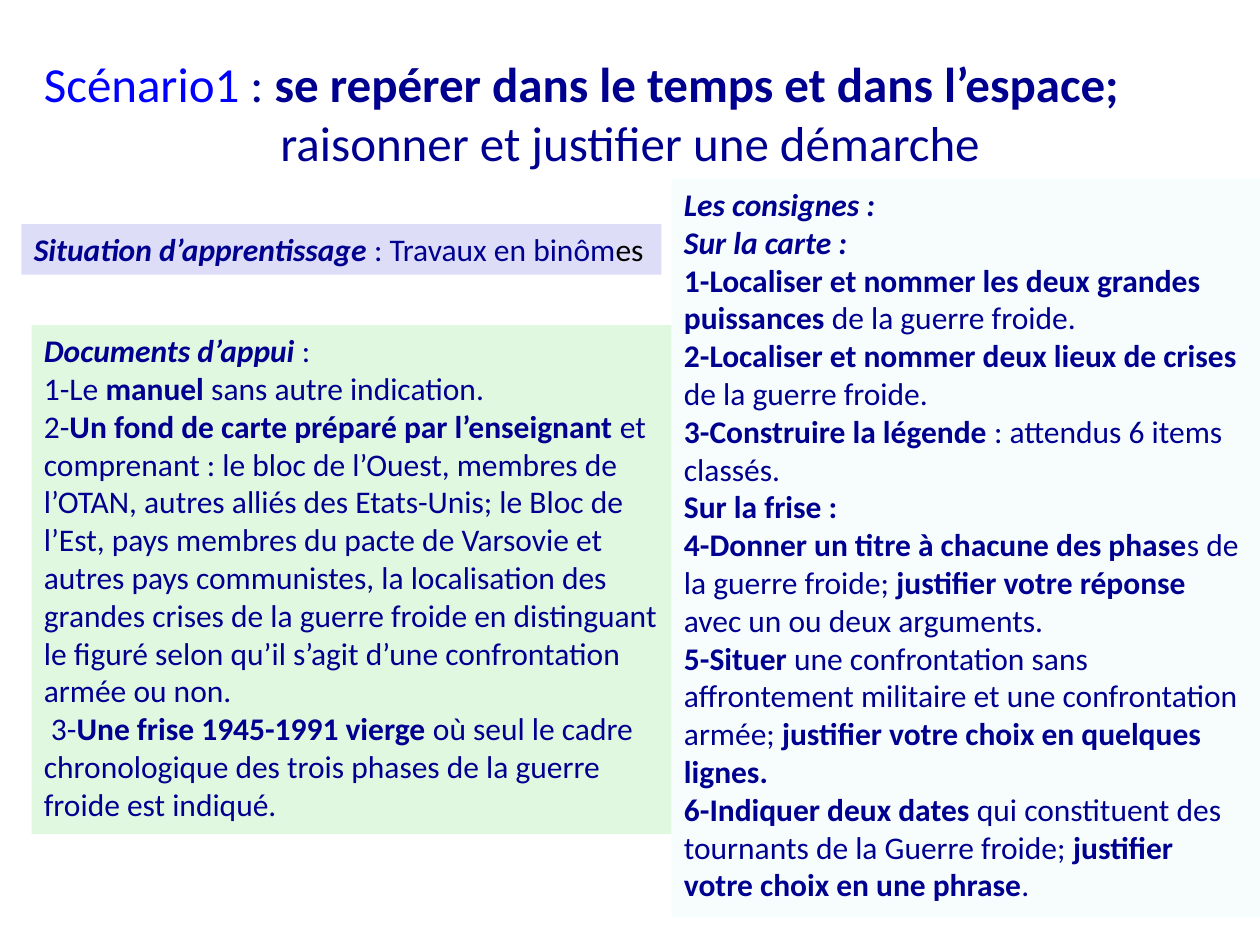
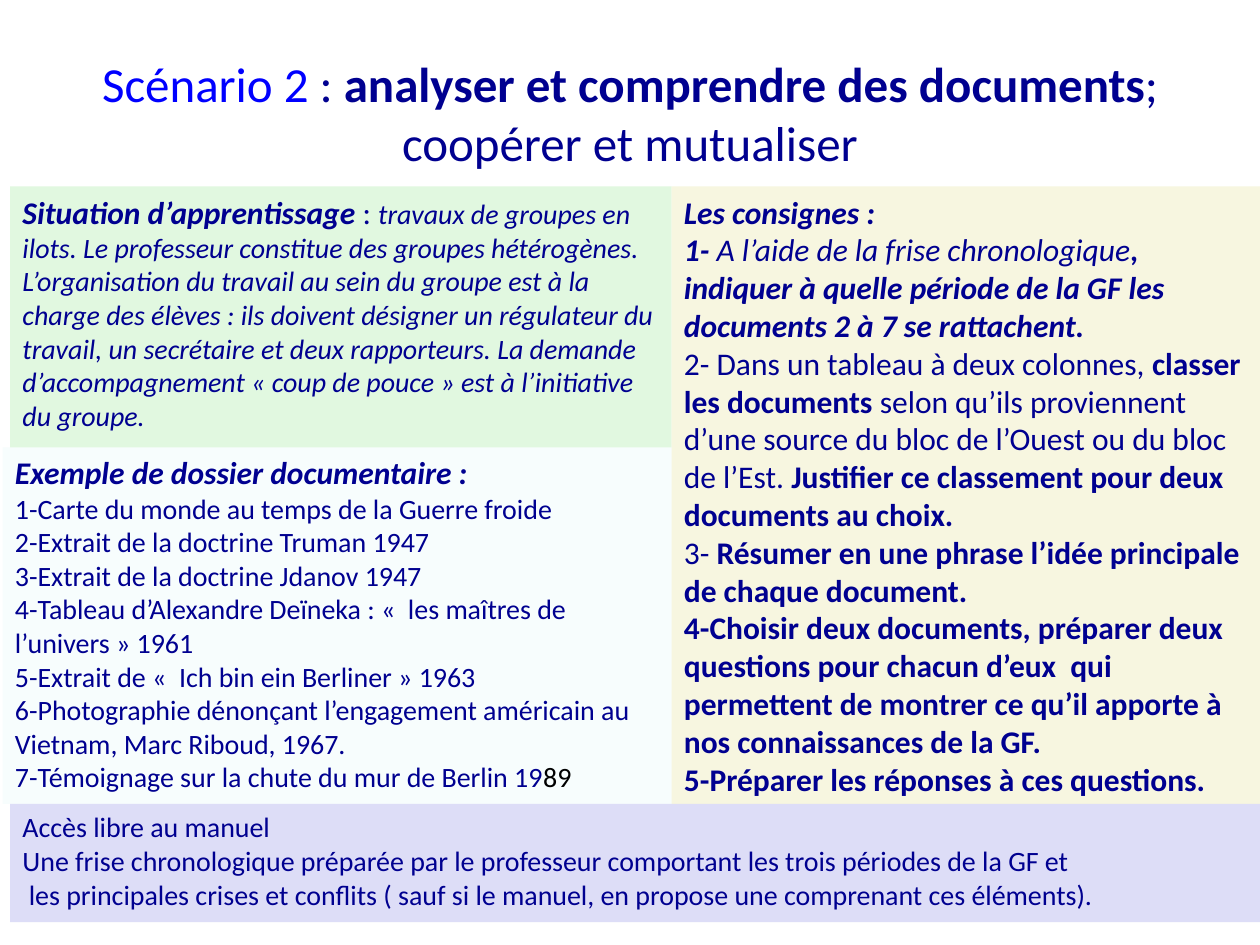
"""Build two lesson scenario slides about the Cold War."""
from pptx import Presentation
from pptx.dml.color import RGBColor
from pptx.enum.shapes import MSO_SHAPE
from pptx.enum.text import MSO_ANCHOR, PP_ALIGN
from pptx.util import Inches, Pt

RECTANGLE = MSO_SHAPE.RECTANGLE
TOP, MIDDLE = MSO_ANCHOR.TOP, MSO_ANCHOR.MIDDLE
LEFT, CENTER = PP_ALIGN.LEFT, PP_ALIGN.CENTER

NAVY, BLUE, BLACK = "000090", "0000FF", "000000"
LAVENDER, MINT, ICE, CREAM = "DDDDF7", "E1F8E0", "F7FDFD", "F7F6E0"

STYLES = {
    "plain": {},
    "bold": {"bold": True},
    "italic": {"italic": True},
    "strong": {"bold": True, "italic": True},
    "heading": {"bold": True, "italic": True, "size": Pt(18)},
    "colon": {"size": Pt(18)},
}
COLOURS = {"blue": BLUE, "black": BLACK}


def rgb(value):
    return RGBColor.from_string(value)


def write(frame, paragraphs, size, anchor=TOP, alignments=(LEFT,)):
    frame.word_wrap = True
    frame.vertical_anchor = anchor
    for number, runs in enumerate(paragraphs):
        paragraph = frame.paragraphs[0] if number == 0 else frame.add_paragraph()
        paragraph.alignment = alignments[min(number, len(alignments) - 1)]
        for text, style in runs:
            run = paragraph.add_run()
            run.text = text
            font_format = {"name": "Calibri", "size": Pt(size), "bold": False, "italic": False}
            font_format.update(STYLES.get(style, {}))
            for attribute, value in font_format.items():
                setattr(run.font, attribute, value)
            run.font.color.rgb = rgb(COLOURS.get(style, NAVY))


scenario_1 = {
    "title": [
        [("Scénario1", "blue"), (" : ", "plain"),
         ("se repérer dans le temps et dans l’espace;", "bold")],
        [("raisonner et justifier une démarche", "plain")],
    ],
    "alignments": (LEFT, CENTER),
    "panels": [
        ((0.17, 1.78, 5.08, 0.4), LAVENDER, 18, [
            [("Situation d’apprentissage ", "strong"), (": Travaux en binôm", "plain"),
             ("es", "black")],
        ]),
        ((0.25, 2.58, 5.08, 4.04), MINT, 18, [
            [("Documents d’appui ", "strong"), (":", "plain")],
            [("1-Le", "plain"), (" manuel ", "bold"), ("sans autre indication.", "plain")],
            [("2-", "plain"), ("Un fond de carte préparé par l’enseignant ", "bold"),
             ("et comprenant : le bloc de l’Ouest, membres de l’OTAN, autres alliés des "
              "Etats-Unis; le Bloc de l’Est, pays membres du pacte de Varsovie et autres pays "
              "communistes, la localisation des grandes crises de la guerre froide en "
              "distinguant le figuré selon qu’il s’agit d’une confrontation armée ou non.",
              "plain")],
            [(" 3-", "plain"), ("Une frise 1945-1991 vierge", "bold"),
             (" où seul le cadre chronologique des trois phases de la guerre froide est "
              "indiqué.", "plain")],
        ]),
        ((5.33, 1.42, 4.67, 5.86), ICE, 18, [
            [("Les consignes :", "strong")],
            [("Sur la carte :", "strong")],
            [("1-Localiser et nommer les deux grandes puissances ", "bold"),
             ("de la guerre froide.", "plain")],
            [("2-Localiser et nommer deux lieux de crises ", "bold"),
             ("de la guerre froide.", "plain")],
            [("3-Construire la légende ", "bold"), (": attendus 6 items classés.", "plain")],
            [("Sur la frise :", "bold")],
            [("4-Donner un titre à chacune des phase", "bold"),
             ("s de la guerre froide; ", "plain"), ("justifier votre réponse ", "bold"),
             ("avec un ou deux arguments.", "plain")],
            [("5-Situer", "bold"),
             (" une confrontation sans affrontement militaire et une confrontation armée; ",
              "plain"),
             ("justifier votre choix en quelques lignes.", "bold")],
            [("6-Indiquer deux dates ", "bold"),
             ("qui constituent des tournants de la Guerre froide; ", "plain"),
             ("justifier votre choix en une phrase", "bold"), (".", "plain")],
        ]),
    ],
}

scenario_2 = {
    "title": [
        [("Scénario 2 ", "blue"), (": ", "plain"),
         ("analyser et comprendre des documents", "bold"),
         ("; coopérer et mutualiser", "plain")],
    ],
    "alignments": (CENTER,),
    "panels": [
        ((0.08, 1.48, 5.25, 2.66), MINT, 16, [
            [("Situation d’apprentissage ", "heading"), (": ", "colon"),
             ("travaux de groupes en ilots. Le professeur constitue des groupes hétérogènes. "
              "L’organisation du travail au sein du groupe est à la charge des élèves : ils "
              "doivent désigner un régulateur du travail, un secrétaire et deux rapporteurs. "
              "La demande d’accompagnement « coup de pouce » est à l’initiative du groupe.",
              "italic")],
        ]),
        ((0.02, 3.55, 5.32, 2.83), ICE, 16, [
            [("Exemple de dossier documentaire :", "heading")],
            [("1-Carte du monde au temps de la Guerre froide", "plain")],
            [("2-Extrait de la doctrine Truman 1947", "plain")],
            [("3-Extrait de la doctrine Jdanov 1947", "plain")],
            [("4-Tableau d’Alexandre Deïneka : «  les maîtres de l’univers » 1961", "plain")],
            [("5-Extrait de «  Ich bin ein Berliner » 1963", "plain")],
            [("6-Photographie dénonçant l’engagement américain au Vietnam, Marc Riboud, 1967.",
              "plain")],
            [("7-Témoignage sur la chute du mur de Berlin 19", "plain"), ("89", "black")],
        ]),
        ((5.33, 1.48, 4.67, 4.95), CREAM, 18, [
            [("Les consignes :", "strong")],
            [("1- ", "strong"), ("A l’aide de la frise chronologique", "italic"),
             (", indiquer à quelle période de la GF les documents 2 à 7 se rattachent.",
              "strong")],
            [("2- Dans un tableau à deux colonnes, ", "plain"),
             ("classer les documents ", "bold"),
             ("selon qu’ils proviennent d’une source du bloc de l’Ouest ou du bloc de l’Est. ",
              "plain"),
             ("Justifier ce classement pour deux documents au choix.", "bold")],
            [("3- ", "plain"),
             ("Résumer en une phrase l’idée principale de chaque document.", "bold")],
            [("4-Choisir deux documents, préparer deux questions pour chacun d’eux  qui "
              "permettent de montrer ce qu’il apporte à nos connaissances de la GF.", "bold")],
            [("5-Préparer les réponses à ces questions.", "bold")],
        ]),
        ((0.08, 6.38, 9.92, 0.94), LAVENDER, 16, [
            [("Accès libre au manuel", "plain")],
            [("Une frise chronologique préparée par le professeur comportant les trois "
              "périodes de la GF et", "plain")],
            [(" les principales crises et conflits ( sauf si le manuel, en propose une "
              "comprenant ces éléments).", "plain")],
        ]),
    ],
}

presentation = Presentation()
presentation.slide_width, presentation.slide_height = Inches(10), Inches(7.5)
blank_layout = presentation.slide_layouts[6]

for scenario in (scenario_1, scenario_2):
    slide = presentation.slides.add_slide(blank_layout)
    title = slide.shapes.add_textbox(Inches(0.25), Inches(0), Inches(9.5), Inches(1.78))
    write(title.text_frame, scenario["title"], 28, MIDDLE, scenario["alignments"])
    for place, fill, size, paragraphs in scenario["panels"]:
        panel = slide.shapes.add_shape(RECTANGLE, *map(Inches, place))
        panel.shadow.inherit = False
        panel.fill.solid()
        panel.fill.fore_color.rgb = rgb(fill)
        panel.line.fill.background()
        write(panel.text_frame, paragraphs, size)

presentation.save("out.pptx")
